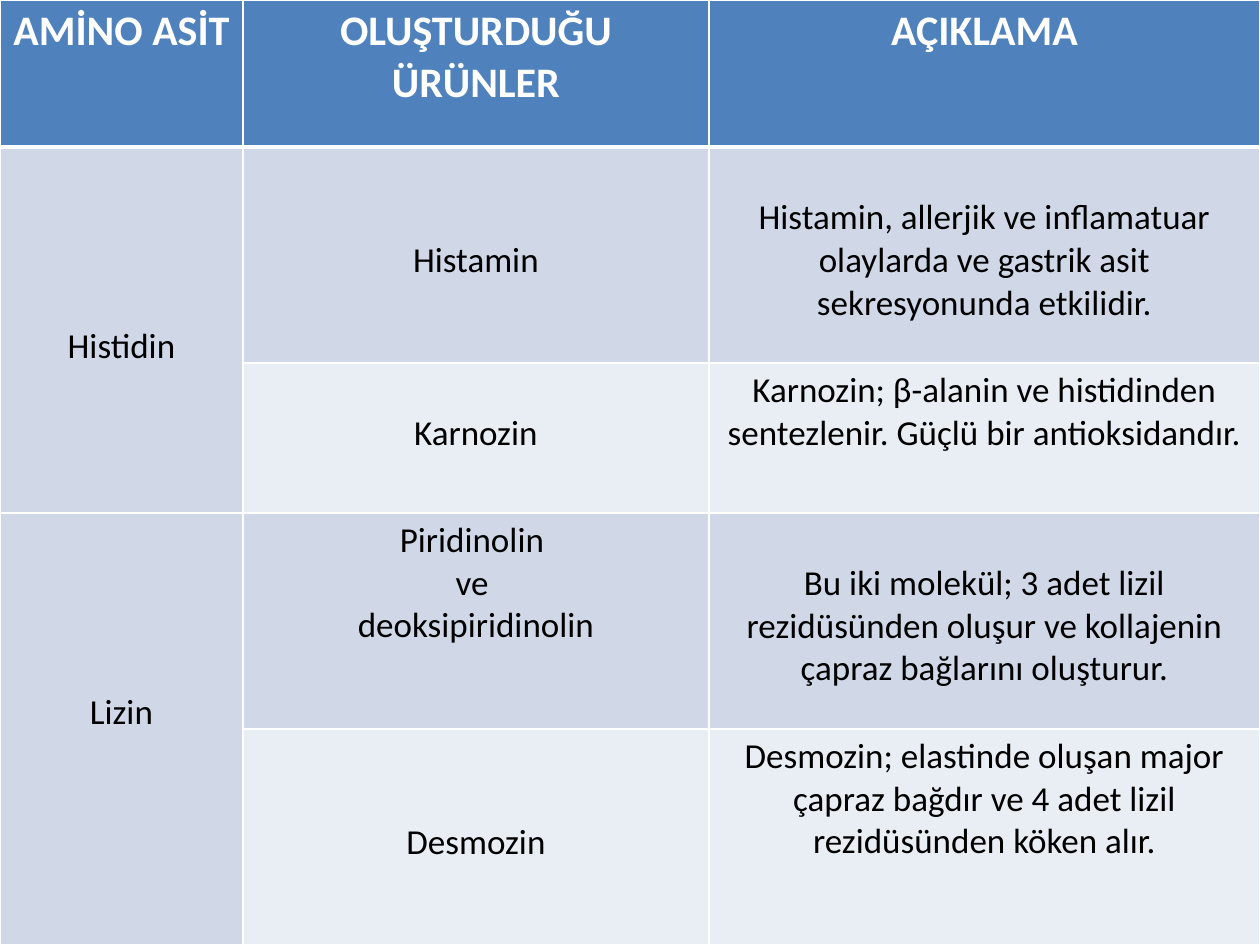
from lxml import etree
from pptx import Presentation
from pptx.dml.color import RGBColor
from pptx.enum.text import PP_ALIGN
from pptx.oxml.ns import qn
from pptx.util import Emu, Pt

CENTER = PP_ALIGN.CENTER

WHITE = RGBColor(0xFF, 0xFF, 0xFF)
BLACK = RGBColor(0, 0, 0)
HEADER_BLUE = RGBColor(0x4F, 0x81, 0xBD)
BAND_DARK = RGBColor(0xD0, 0xD8, 0xE8)
BAND_LIGHT = RGBColor(0xE9, 0xED, 0xF4)

FONT = "Calibri"
SLIDE_BOX = (0, 0, 1260, 945)
COLUMN_WIDTHS = (243, 466, 551)
ROW_HEIGHTS = (147, 216, 150, 216, 216)
TOP_MARGIN = 6
LINE_HEIGHT = 43  # one line of 20 pt body text

HEADINGS = ("AMİNO ASİT", "OLUŞTURDUĞU ÜRÜNLER", "AÇIKLAMA")

# Each entry is (text, lines it is lowered by); None continues the cell above.
ROWS = (
    (("Histidin", 4),
     ("Histamin", 2),
     ("Histamin, allerjik ve inflamatuar olaylarda ve gastrik asit "
      "sekresyonunda etkilidir.", 1)),
    (None,
     ("Karnozin", 1),
     ("Karnozin; β-alanin ve histidinden sentezlenir. "
      "Güçlü bir antioksidandır.", 0)),
    (("Lizin", 4),
     ("Piridinolin \nve \ndeoksipiridinolin", 0),
     ("Bu iki molekül; 3 adet lizil rezidüsünden oluşur ve kollajenin "
      "çapraz bağlarını oluşturur.", 1)),
    (None,
     ("Desmozin", 2),
     ("Desmozin; elastinde oluşan major çapraz bağdır ve 4 adet lizil "
      "rezidüsünden köken alır.", 0)),
)


def px(length):
    return Emu(round(length * 914400 / 126))


def set_borders(cell, top=1, bottom=1):
    """Draw white cell borders, widths in points; call before filling."""
    properties = cell._tc.get_or_add_tcPr()
    for side, width in (("L", 1), ("R", 1), ("T", top), ("B", bottom)):
        line = etree.SubElement(properties, qn(f"a:ln{side}"), w=str(Pt(width)))
        fill = etree.SubElement(line, qn("a:solidFill"))
        etree.SubElement(fill, qn("a:srgbClr"), val=str(WHITE))


def paint(cell, color):
    cell.fill.solid()
    cell.fill.fore_color.rgb = color


def write(cell, text, size, color, bold=False, lowered=0):
    cell.margin_top = px(TOP_MARGIN + lowered * LINE_HEIGHT)
    cell.text = text
    for paragraph in cell.text_frame.paragraphs:
        paragraph.alignment = CENTER
        font = paragraph.font
        font.name, font.size, font.bold = FONT, Pt(size), bold
        font.color.rgb = color


def add_amino_acid_table(slide, box):
    table = slide.shapes.add_table(
        len(ROW_HEIGHTS), len(COLUMN_WIDTHS), *map(px, box)).table
    for column, width in zip(table.columns, COLUMN_WIDTHS):
        column.width = px(width)
    for row, height in zip(table.rows, ROW_HEIGHTS):
        row.height = px(height)

    for col, heading in enumerate(HEADINGS):
        cell = table.cell(0, col)
        set_borders(cell, bottom=3)
        paint(cell, HEADER_BLUE)
        write(cell, heading, 24, WHITE, bold=True)

    for row, entries in enumerate(ROWS, start=1):
        for col, entry in enumerate(entries):
            cell = table.cell(row, col)
            set_borders(cell, top=3 if row == 1 else 1)
            paint(cell, BAND_DARK if row % 2 or col == 0 else BAND_LIGHT)
            if entry is None:
                table.cell(row - 1, col).merge(cell)
            else:
                text, lowered = entry
                write(cell, text, 20, BLACK, lowered=lowered)


def main():
    presentation = Presentation()
    presentation.slide_width = px(SLIDE_BOX[2])
    presentation.slide_height = px(SLIDE_BOX[3])
    slide = presentation.slides.add_slide(presentation.slide_layouts[6])
    add_amino_acid_table(slide, SLIDE_BOX)
    presentation.save("out.pptx")


if __name__ == "__main__":
    main()
